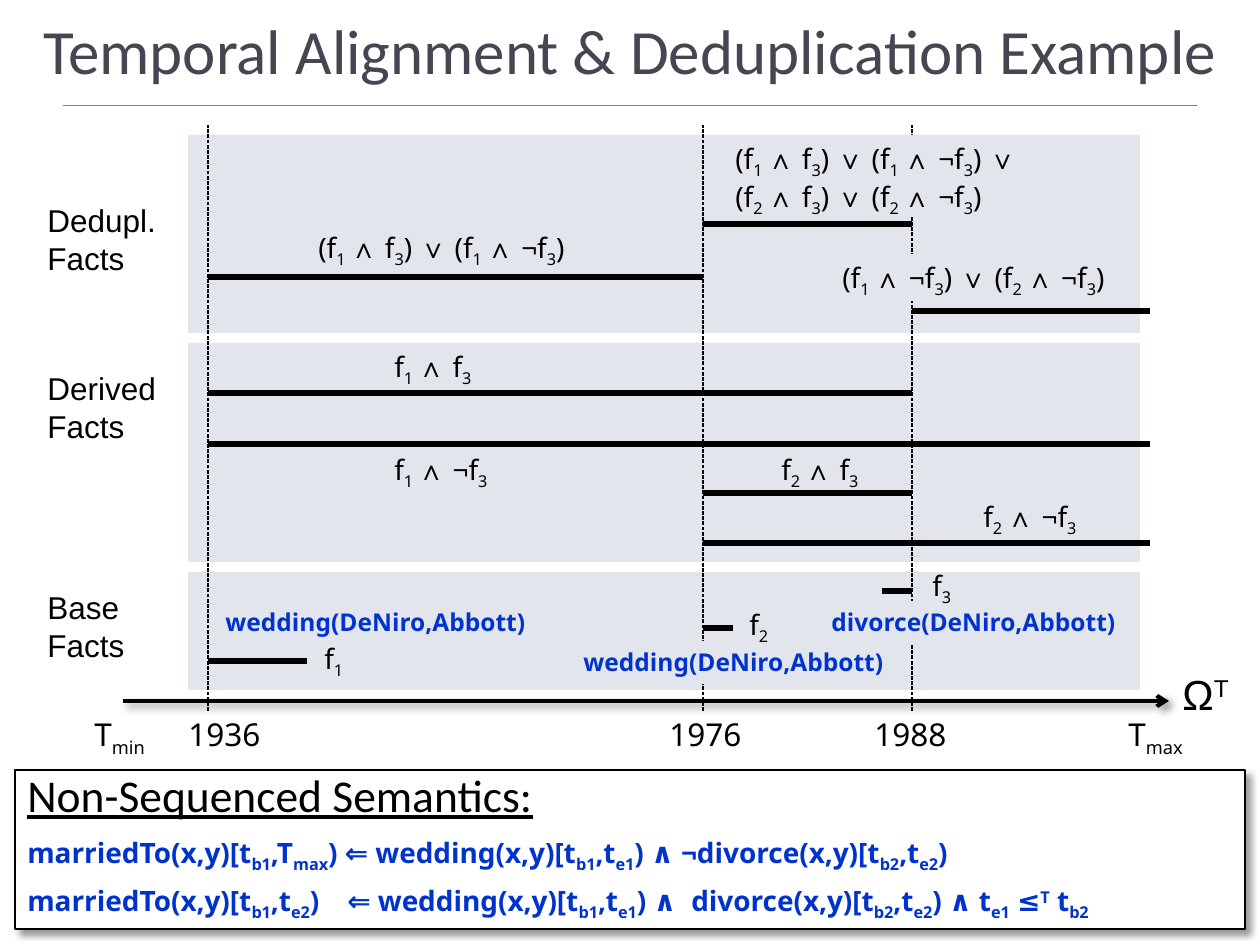
from itertools import groupby

from lxml.etree import SubElement
from pptx import Presentation
from pptx.dml.color import RGBColor
from pptx.enum.dml import MSO_LINE
from pptx.enum.shapes import MSO_CONNECTOR, MSO_SHAPE
from pptx.enum.text import MSO_ANCHOR, PP_ALIGN
from pptx.oxml.ns import qn
from pptx.util import Pt

PX = 7257  # EMU per px, 126 px to the inch
BLACK, WHITE, PANEL, BLUE = "000000", "FFFFFF", "E3E5ED", "0033CC"
SANS, ARIAL, CALIBRI = "Noto Sans", "Arial", "Calibri"
# {text} is subscript, <text> is superscript
BASELINES = {"{": -25000, "}": 0, "<": 30000, ">": 0}
color = RGBColor.from_string


def set_effects(shape, shadow=False):
    effects = SubElement(shape._element.spPr, qn("a:effectLst"))
    if shadow:
        outer = SubElement(effects, qn("a:outerShdw"), blurRad=str(Pt(4)),
                           dist=str(Pt(3)), dir="2700000", algn="tl", rotWithShape="0")
        tint = SubElement(outer, qn("a:srgbClr"), val=BLACK)
        SubElement(tint, qn("a:alpha"), val="40000")


def write(text, left, top, width, height, size=16, font=SANS, ink=BLACK, bold=False,
          underline=False, fill=None, align=PP_ALIGN.LEFT, anchor=MSO_ANCHOR.TOP,
          gap=0, tabs=()):
    box = page.shapes.add_textbox(left * PX, top * PX, width * PX, height * PX)
    if fill:
        box.fill.solid()
        box.fill.fore_color.rgb = color(fill)
    frame = box.text_frame
    frame.word_wrap = True
    frame.vertical_anchor = anchor
    for index, line in enumerate(text.split("\n")):
        para = frame.paragraphs[0] if index == 0 else frame.add_paragraph()
        para.alignment = align
        if index and gap:
            para.space_before = Pt(gap)
        if tabs:
            stops = SubElement(para._p.get_or_add_pPr(), qn("a:tabLst"))
            for stop in tabs:
                SubElement(stops, qn("a:tab"), pos=str(stop * PX), algn="l")

        # Split into runs by baseline, with logic operators in bold Arial
        base, marked = 0, []
        for char in line:
            if char in BASELINES:
                base = BASELINES[char]
            else:
                marked.append((base, char in "∧∨" and not bold, char))
        for (base, operator), chars in groupby(marked, key=lambda item: item[:2]):
            span = para.add_run()
            span.text = "".join(item[2] for item in chars)
            span.font.size = Pt(size)
            span.font.name = ARIAL if operator else font
            span.font.bold = bold or operator
            span.font.underline = underline
            span.font.color.rgb = color(ink)
            if base:
                span._r.get_or_add_rPr().set("baseline", str(base))


deck = Presentation()
deck.slide_width, deck.slide_height = 1260 * PX, 945 * PX
page = deck.slides.add_slide(deck.slide_layouts[6])

# Rule box and the three fact panels
for left, top, width, height, fill, framed in [
    (15, 770, 1230, 159, WHITE, True),
    (188, 135, 952, 198, PANEL, False),
    (188, 343, 952, 219, PANEL, False),
    (188, 572, 952, 118, PANEL, False),
]:
    panel = page.shapes.add_shape(MSO_SHAPE.RECTANGLE, left * PX, top * PX,
                                  width * PX, height * PX)
    panel.fill.solid()
    panel.fill.fore_color.rgb = color(fill)
    if framed:
        panel.line.color.rgb = color(BLACK)
        panel.line.width = Pt(1)
        set_effects(panel, shadow=True)
    else:
        panel.line.fill.background()
        panel.shadow.inherit = False

# Lines: title rule, time axis, year marks, fact intervals
Y1936, Y1976, Y1988, END = 208, 703, 912, 1150
lines = [(63, 105, 1197, 105, "808080", 0.25, "rule"),
         (123, 701, 1169, 701, BLACK, 2.25, "axis")]
lines += [(x, 711, x, 125, BLACK, 0.75, "year") for x in (Y1936, Y1976, Y1988)]
lines += [(start, y, end, y, BLACK, 3, "interval") for start, end, y in [
    (Y1936, 307, 661), (Y1976, 733, 628), (882, Y1988, 591),
    (Y1976, END, 543), (Y1976, Y1988, 493), (Y1936, END, 444), (Y1936, Y1988, 393),
    (Y1936, Y1976, 277), (Y1976, Y1988, 224), (Y1988, END, 311),
]]
for x1, y1, x2, y2, ink, weight, role in lines:
    line = page.shapes.add_connector(MSO_CONNECTOR.STRAIGHT,
                                     x1 * PX, y1 * PX, x2 * PX, y2 * PX)
    line.line.color.rgb = color(ink)
    line.line.width = Pt(weight)
    if role == "year":
        line.line.dash_style = MSO_LINE.SQUARE_DOT
    if role == "axis":
        SubElement(line.line._get_or_add_ln(), qn("a:tailEnd"), type="arrow")
    set_effects(line, shadow=role in ("rule", "axis"))

# Title
write("Temporal Alignment & Deduplication Example", 15, 0, 1230, 93, size=36,
      font=CALIBRI, ink="464653", align=PP_ALIGN.CENTER, anchor=MSO_ANCHOR.BOTTOM)

# Row names
for name, top in [("Dedupl.", 195), ("Derived", 363), ("Base", 582)]:
    write(f"{name}\nFacts", 35, top, 140, 89, size=18, font=ARIAL)

# Axis labels
for label, left in [("T{min}", 82), ("1936", 176), ("1976", 657), ("1988", 862),
                    ("T{max}", 1116)]:
    write(label, left, 709, 106, 50, size=18)
write("Ω<T>", 1170, 662, 80, 63, size=24, font=ARIAL)

# Base fact names, filled, so they lie behind the fact labels
for fact, left, top, width in [("wedding", 213, 601, 334), ("wedding", 571, 641, 334),
                               ("divorce", 819, 601, 318)]:
    write(f"{fact}(DeNiro,Abbott)", left, top, width, 43, size=14, ink=BLUE,
          bold=True, fill=PANEL)

# Fact labels and lineage formulas
for formula, left, top, width in [
    ("f{1}", 312, 635, 48), ("f{2}", 737, 601, 48), ("f{3}", 920, 562, 48),
    ("f{2 }∧ ¬f{3}", 971, 493, 139), ("f{2 }∧ f{3}", 769, 446, 139),
    ("f{1 }∧ ¬f{3}", 382, 446, 139), ("f{1 }∧ f{3}", 382, 343, 139),
    ("(f{1 }∧ f{3}) ∨ (f{1 }∧ ¬f{3})", 306, 224, 297),
]:
    write(formula, left, top, width, 47)
write("(f{1 }∧ f{3}) ∨ (f{1 }∧ ¬f{3}) ∨\n(f{2 }∧ f{3}) ∨ (f{2 }∧ ¬f{3})",
      723, 135, 387, 81, fill=PANEL)
write("(f{1 }∧ ¬f{3}) ∨ (f{2 }∧ ¬f{3})", 830, 254, 300, 47, fill=PANEL)

# Rules
write("Non-Sequenced Semantics:", 15, 761, 1134, 60, size=26, font=CALIBRI,
      underline=True)
write("marriedTo(x,y)[t{b1},T{max}) ⇐ wedding(x,y)[t{b1},t{e1}) ∧ "
      "¬divorce(x,y)[t{b2},t{e2})\n"
      "marriedTo(x,y)[t{b1},t{e2})\t⇐ wedding(x,y)[t{b1},t{e1}) ∧\t"
      "divorce(x,y)[t{b2},t{e2}) ∧ t{e1} ≤<T> t{b2}",
      15, 829, 1176, 91, ink=BLUE, bold=True, gap=6, tabs=(320, 664))

deck.save("out.pptx")
